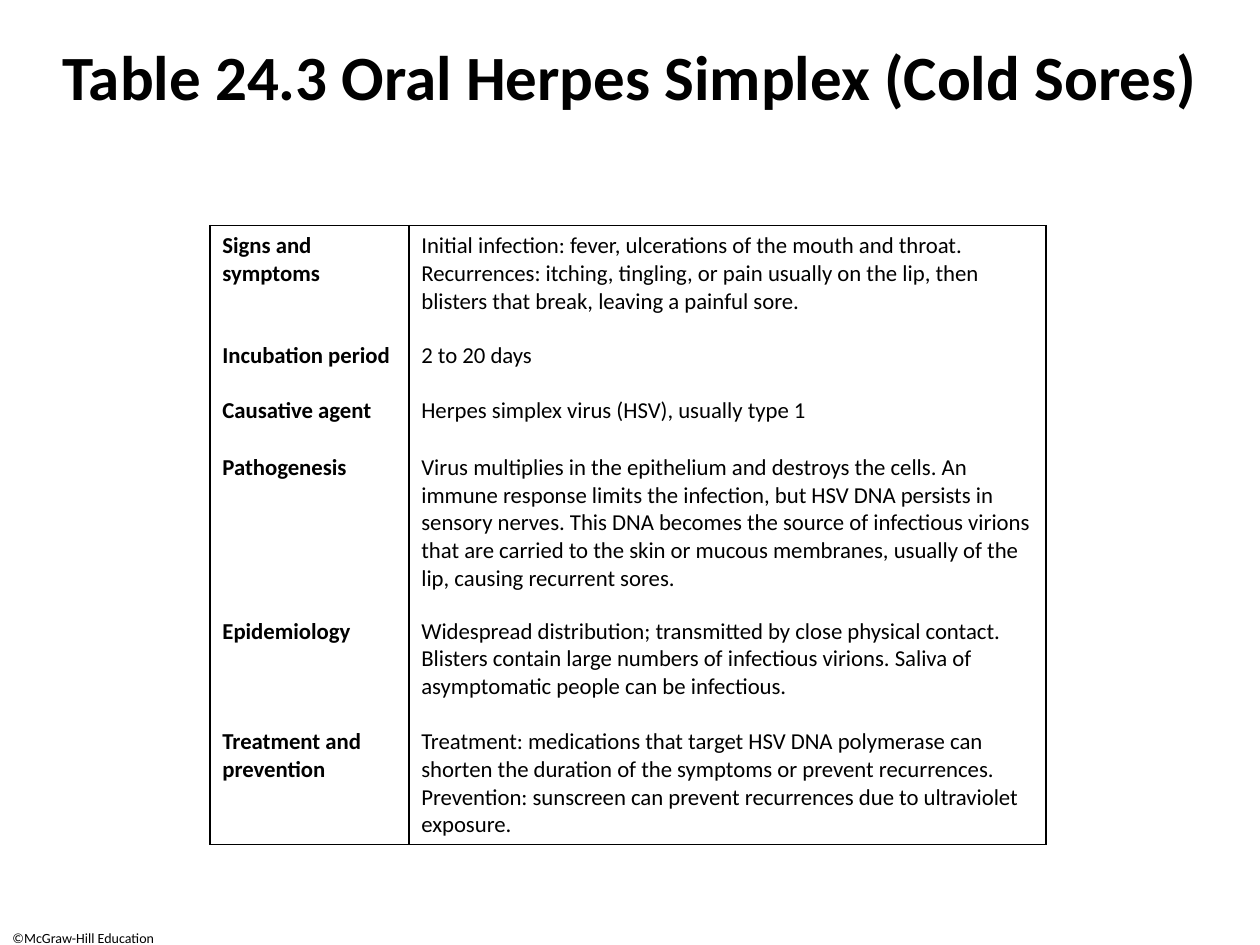
import pptx
import pptx.dml.color
import pptx.enum.text
import pptx.oxml.ns
import pptx.util
from lxml import etree

Cm = pptx.util.Cm
Pt = pptx.util.Pt
ALIGN = pptx.enum.text.PP_ALIGN

FONT = "Calibri"
COLORS = {"text": "000000", "border": "000000"}
COLUMN_WIDTHS = [4.01, 12.85]
ROW_HEIGHTS = [2.21, 1.12, 1.14, 3.3, 2.23, 2.48]
ROWS = [
    ("Signs and symptoms",
     "Initial infection: fever, ulcerations of the mouth and throat. "
     "Recurrences: itching, tingling, or pain usually on the lip, then "
     "blisters that break, leaving a painful sore."),
    ("Incubation period", "2 to 20 days"),
    ("Causative agent", "Herpes simplex virus (HSV), usually type 1"),
    ("Pathogenesis",
     "Virus multiplies in the epithelium and destroys the cells. An immune "
     "response limits the infection, but HSV DNA persists in sensory nerves. "
     "This DNA becomes the source of infectious virions that are carried to "
     "the skin or mucous membranes, usually of the lip, causing recurrent sores."),
    ("Epidemiology",
     "Widespread distribution; transmitted by close physical contact. Blisters "
     "contain large numbers of infectious virions. Saliva of asymptomatic "
     "people can be infectious."),
    ("Treatment and prevention",
     "Treatment: medications that target HSV DNA polymerase can shorten the "
     "duration of the symptoms or prevent recurrences. Prevention: sunscreen "
     "can prevent recurrences due to ultraviolet exposure."),
]


def write_text(text_frame, text, size=13, bold=False, align=ALIGN.LEFT):
    text_frame.word_wrap = True
    paragraph = text_frame.paragraphs[0]
    paragraph.alignment = align
    run = paragraph.add_run()
    run.text = text
    run.font.name = FONT
    run.font.size = Pt(size)
    run.font.bold = bold
    run.font.color.rgb = pptx.dml.color.RGBColor.from_string(COLORS["text"])


def add_text_box(slide, left, top, width, height, text, **text_format):
    box = slide.shapes.add_textbox(Cm(left), Cm(top), Cm(width), Cm(height))
    write_text(box.text_frame, text, **text_format)


def set_borders(cell, visible_sides):
    properties = cell._tc.get_or_add_tcPr()
    qn = pptx.oxml.ns.qn
    for side in "LRTB":
        line = etree.SubElement(properties, qn(f"a:ln{side}"), w=str(Pt(1)))
        if side in visible_sides:
            fill = etree.SubElement(line, qn("a:solidFill"))
            etree.SubElement(fill, qn("a:srgbClr"), val=COLORS["border"])
        else:
            etree.SubElement(line, qn("a:noFill"))


def add_disease_table(slide, left, top):
    table = slide.shapes.add_table(
        len(ROWS), len(COLUMN_WIDTHS), Cm(left), Cm(top),
        Cm(sum(COLUMN_WIDTHS)), Cm(sum(ROW_HEIGHTS))).table
    table.first_row = False
    table.horz_banding = False
    for column, width in zip(table.columns, COLUMN_WIDTHS):
        column.width = Cm(width)
    for row_index, (row, height) in enumerate(zip(table.rows, ROW_HEIGHTS)):
        row.height = Cm(height)
        # Vertical rules everywhere, horizontal ones only on the outer edge
        sides = "LR"
        if row_index == 0:
            sides += "T"
        if row_index == len(ROWS) - 1:
            sides += "B"
        for column_index, text in enumerate(ROWS[row_index]):
            cell = table.cell(row_index, column_index)
            set_borders(cell, sides)
            cell.fill.background()
            write_text(cell.text_frame, text, bold=column_index == 0)


def main():
    presentation = pptx.Presentation()
    presentation.slide_width = Cm(25.4)
    presentation.slide_height = Cm(19.05)
    slide = presentation.slides.add_slide(presentation.slide_layouts[6])

    # Copyright line
    add_text_box(slide, 0, 18.62, 3.81, 0.43, "©McGraw-Hill Education", size=8)

    # Title
    add_text_box(slide, 0, 0.64, 25.4, 1.7,
                 "Table 24.3 Oral Herpes Simplex (Cold Sores)",
                 size=36, bold=True, align=ALIGN.CENTER)

    # Disease summary
    add_disease_table(slide, 4.23, 4.55)

    presentation.save("out.pptx")


if __name__ == "__main__":
    main()
